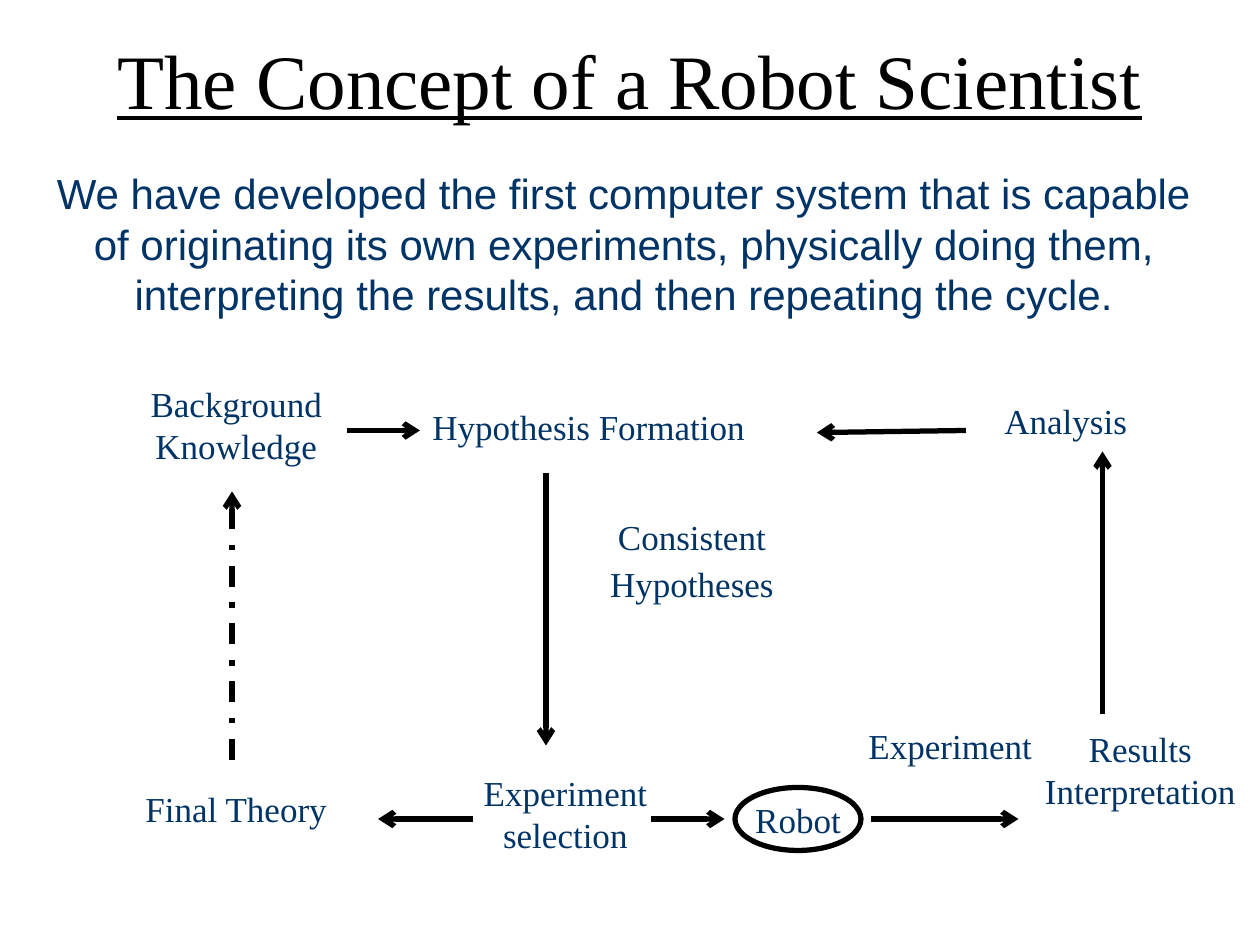
from lxml import etree
from pptx import Presentation
from pptx import util as u
from pptx.dml.color import RGBColor
from pptx.enum import dml, shapes, text
from pptx.oxml.ns import qn

NAVY = RGBColor(0x00, 0x33, 0x66)
BLACK = RGBColor(0x00, 0x00, 0x00)
SERIF, SANS = "Times New Roman", "Arial"
COLS, ROWS = 120, 90
WIDTH, HEIGHT = u.Inches(10), u.Inches(7.5)

LABELS = [
    ("Background Knowledge", 7, 40.4, 31, 2),
    ("Analysis", 89, 40, 25, 1),
    ("Final Theory", 8, 77, 29, 1),
    ("Experiment selection", 42.4, 77.5, 22.9, 2),
    ("Robot", 65, 78, 22, 1),
    ("Experiment", 77, 71, 27, 1),
    ("Results Interpretation", 94.9, 73.3, 27.4, 2),
]
ARROWS = [
    (52, 45, 52, 71),
    (92, 41, 77.8, 41.2),
    (45, 78, 36, 78),
    (33, 41, 40, 41),
    (62, 78, 69, 78),
    (83, 78, 97, 78),
    (105, 68, 105, 43),
]
INTRO = (
    "We have developed the first computer system that is capable of "
    "originating its own experiments, physically doing them, interpreting "
    "the results, and then repeating the cycle."
)


def x(col):
    return round(WIDTH * col / COLS)


def y(row):
    return round(HEIGHT * row / ROWS)


def add_text(s, content, left, middle, width, height, size=20, font=SERIF,
             color=NAVY, align=text.PP_ALIGN.CENTER, underline=None,
             wrap=True, spacing=None, before=10):
    sp = s.shapes.add_textbox(x(left), y(middle - height / 2), x(width), y(height))
    tf = sp.text_frame
    tf.word_wrap = wrap
    tf.auto_size = text.MSO_AUTO_SIZE.NONE
    tf.vertical_anchor = text.MSO_ANCHOR.MIDDLE
    tf.text = content
    for p in tf.paragraphs:
        p.alignment = align
        p.line_spacing = spacing
        p.space_before = u.Pt(before)
        f = p.runs[0].font
        f.name, f.size, f.underline = font, u.Pt(size), underline
        f.color.rgb = color


def add_label(s, content, left, middle, width, lines, **fmt):
    add_text(s, content, left, middle, width, 1.2 + 4 * lines, **fmt)


def add_arrow(s, x1, y1, x2, y2, dash=None):
    c = s.shapes.add_connector(shapes.MSO_CONNECTOR.STRAIGHT,
                               x(x1), y(y1), x(x2), y(y2))
    c.line.color.rgb = BLACK
    c.line.width = u.Pt(3)
    c.line.dash_style = dash
    etree.SubElement(c.line._get_or_add_ln(), qn("a:tailEnd"), type="arrow")
    etree.SubElement(c._element.spPr, qn("a:effectLst"))


def add_ellipse(s, left, top, width, height):
    sp = s.shapes.add_shape(shapes.MSO_SHAPE.OVAL,
                            x(left), y(top), x(width), y(height))
    sp.shadow.inherit = False
    sp.fill.background()
    sp.line.color.rgb = BLACK
    sp.line.width = u.Pt(3)


def main():
    prs = Presentation()
    prs.slide_width, prs.slide_height = WIDTH, HEIGHT
    s = prs.slides.add_slide(prs.slide_layouts[6])

    add_text(s, "The Concept of a Robot Scientist", 0, 7.5, COLS, 15,
             size=44, color=BLACK, underline=True, before=0)
    for label in LABELS:
        add_label(s, *label)
    add_label(s, "Consistent\nHypotheses", 50.4, 53.8, 31, 2, spacing=0.7)
    for arrow in ARROWS:
        add_arrow(s, *arrow)
    add_ellipse(s, 70, 75, 12, 6)
    add_text(s, INTRO, 4, 23.2, 110.8, 15.6, size=24, font=SANS, before=12)
    add_arrow(s, 22.1, 72.4, 22.1, 46.8, dash=dml.MSO_LINE.DASH_DOT)
    add_label(s, "Hypothesis Formation", 40, 40.6, 32.2, 1,
              align=text.PP_ALIGN.LEFT, wrap=False)

    prs.save("out.pptx")


if __name__ == "__main__":
    main()
